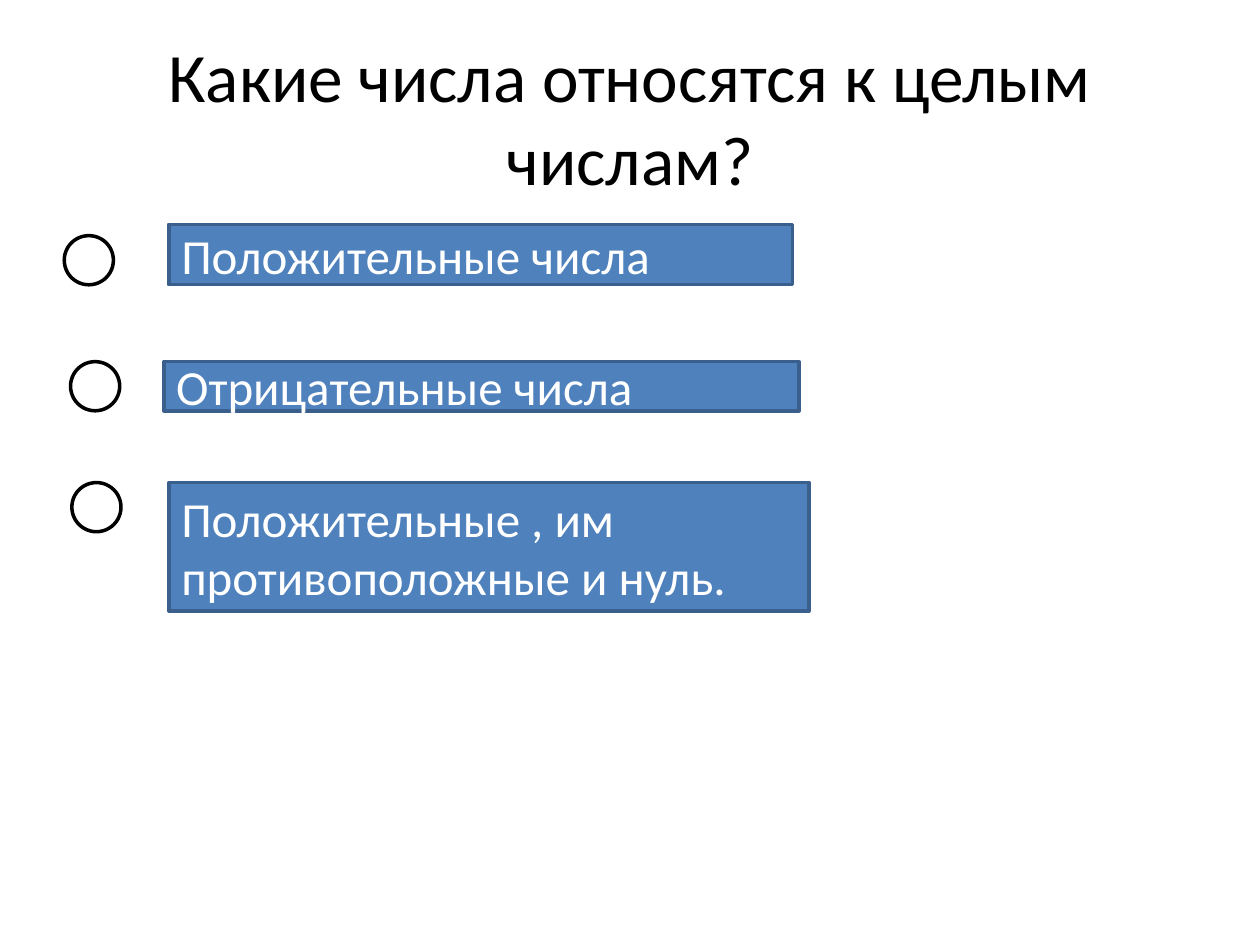
from pptx import Presentation
from pptx.dml.color import RGBColor
from pptx.enum.shapes import MSO_SHAPE as Shape
from pptx.enum.text import MSO_ANCHOR as Anchor, MSO_AUTO_SIZE as AutoSize, PP_ALIGN as Align
from pptx.util import Inches, Pt

MARKER_SIZE = 0.39
TITLE_BOX = (0.5, 0.3, 9, 1.25)
ANSWERS = [
    ("Положительные числа", (0.51, 1.87), (1.34, 1.78, 4.95, 0.48)),
    ("Отрицательные числа", (0.56, 2.87), (1.3, 2.87, 5.04, 0.39)),
    ("Положительные , им противоположные и нуль.", (0.57, 3.83), (1.34, 3.83, 5.08, 1.02)),
]


def color(value):
    """Turn a hex string into a colour."""
    return RGBColor.from_string(value)


def write_text(shape, text, size, hex_color, align):
    """Put one formatted, vertically centred paragraph into a shape."""
    frame = shape.text_frame
    frame.text = text
    frame.word_wrap = True
    frame.auto_size = AutoSize.NONE
    frame.vertical_anchor = Anchor.MIDDLE
    paragraph = frame.paragraphs[0]
    paragraph.alignment = align
    font = paragraph.runs[0].font
    for name, value in {"name": "Calibri", "size": Pt(size)}.items():
        setattr(font, name, value)
    font.color.rgb = color(hex_color)


def add_figure(slide, kind, box, fill, line):
    """Add a flat preset shape with a two-point outline."""
    shape = slide.shapes.add_shape(kind, *map(Inches, box))
    shape.shadow.inherit = False
    shape.fill.solid()
    shape.fill.fore_color.rgb = color(fill)
    shape.line.color.rgb = color(line)
    shape.line.width = Pt(2)
    return shape


def place_title(slide, box, text):
    """Move the title placeholder to its box and fill it."""
    title = slide.shapes.title
    for name, value in zip(("left", "top", "width", "height"), box):
        setattr(title, name, Inches(value))
    write_text(title, text, 39.6, "000000", Align.CENTER)


def place_answer(slide, text, marker_corner, box):
    """Add a round marker and the answer bar beside it."""
    marker_box = (*marker_corner, MARKER_SIZE, MARKER_SIZE)
    add_figure(slide, Shape.OVAL, marker_box, "FFFFFF", "000000")
    bar = add_figure(slide, Shape.RECTANGLE, box, "4F81BD", "3A5F8C")
    write_text(bar, text, 28, "FFFFFF", Align.LEFT)


def main():
    """Build the quiz slide and save it."""
    presentation = Presentation()
    presentation.slide_width = Inches(10)
    presentation.slide_height = Inches(7.5)
    slide = presentation.slides.add_slide(presentation.slide_layouts[5])
    place_title(slide, TITLE_BOX, "Какие числа относятся к целым числам?")
    for text, marker_corner, box in ANSWERS:
        place_answer(slide, text, marker_corner, box)
    presentation.save("out.pptx")


if __name__ == "__main__":
    main()
